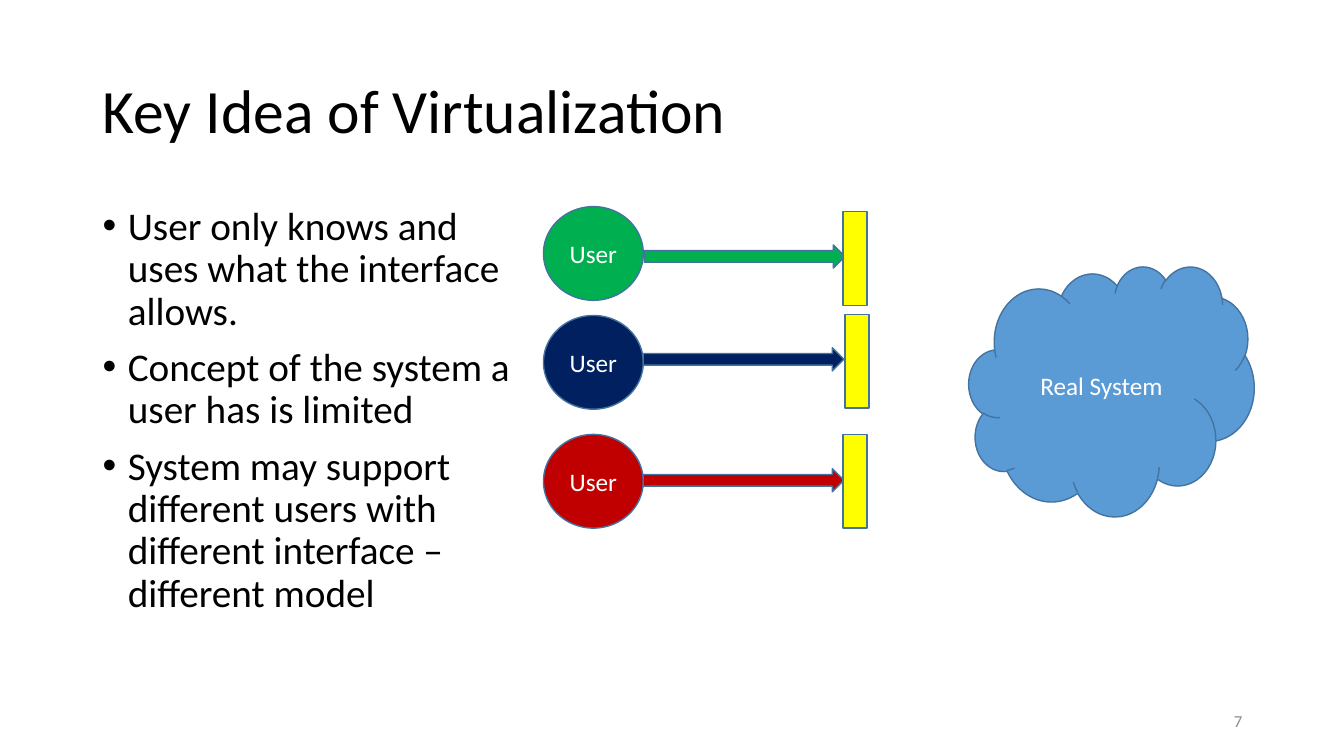
"""Build the slide on the key idea of virtualization."""
from dataclasses import dataclass

from lxml import etree
from pptx import Presentation
from pptx import util as u
from pptx.dml.color import RGBColor
from pptx.enum import shapes, text
from pptx.oxml.ns import qn


@dataclass(frozen=True)
class Theme:
    font: str = "Calibri"
    ink: str = "000000"
    light: str = "FFFFFF"
    muted: str = "8C8C8C"
    outline: str = "43739E"
    system: str = "5B9BD5"
    interface: str = "FFFF00"
    title_size: int = 44
    body_size: int = 28
    label_size: int = 18
    number_size: int = 12


@dataclass(frozen=True)
class Box:
    left: float
    top: float
    width: float
    height: float

    def lengths(self) -> list[u.Length]:
        return [u.Inches(value) for value in (self.left, self.top, self.width, self.height)]


@dataclass(frozen=True)
class User:
    color: str
    top: float
    arrow_left: float
    arrow_top: float
    interface_left: float
    interface_top: float


THEME = Theme()
USERS = [
    User("00B050", 2.05, 6.39, 2.43, 8.36, 2.1),
    User("002060", 3.13, 6.38, 3.45, 8.38, 3.12),
    User("C00000", 4.31, 6.38, 4.65, 8.36, 4.31),
]
POINTS = [
    "User only knows and uses what the interface allows.",
    "Concept of the system a user has is limited",
    "System may support different users with different interface – different model",
]


def style_paragraph(paragraph, size: int, color: str, alignment=text.PP_ALIGN.LEFT) -> None:
    paragraph.alignment = alignment
    for run in paragraph.runs:
        run.font.name = THEME.font
        run.font.size = u.Pt(size)
        run.font.color.rgb = RGBColor.from_string(color)


def add_text(slide, box: Box, lines: list[str], size: int, color: str,
             anchor=text.MSO_ANCHOR.MIDDLE, alignment=text.PP_ALIGN.LEFT):
    frame = slide.shapes.add_textbox(*box.lengths()).text_frame
    frame.word_wrap = True
    frame.vertical_anchor = anchor
    frame.text = "\n".join(lines)
    for paragraph in frame.paragraphs:
        style_paragraph(paragraph, size, color, alignment)
    return frame


def add_bullet(paragraph) -> None:
    properties = paragraph._p.get_or_add_pPr()
    properties.set("marL", str(u.Inches(0.25)))
    properties.set("indent", str(-u.Inches(0.25)))
    etree.SubElement(properties, qn("a:buFont")).set("typeface", "Arial")
    etree.SubElement(properties, qn("a:buChar")).set("char", "•")


def add_figure(slide, kind, box: Box, fill: str, label: str = "") -> None:
    shape = slide.shapes.add_shape(kind, *box.lengths())
    shape.shadow.inherit = False
    shape.fill.solid()
    shape.fill.fore_color.rgb = RGBColor.from_string(fill)
    shape.line.color.rgb = RGBColor.from_string(THEME.outline)
    shape.line.width = u.Pt(1)
    if label:
        frame = shape.text_frame
        frame.text = label
        frame.vertical_anchor = text.MSO_ANCHOR.MIDDLE
        style_paragraph(frame.paragraphs[0], THEME.label_size, THEME.light, text.PP_ALIGN.CENTER)


def add_user(slide, user: User) -> None:
    kinds = shapes.MSO_SHAPE
    add_figure(slide, kinds.OVAL, Box(5.39, user.top, 0.99, 0.93), user.color, "User")
    add_figure(slide, kinds.RIGHT_ARROW, Box(user.arrow_left, user.arrow_top, 1.99, 0.23), user.color)
    add_figure(slide, kinds.RECTANGLE, Box(user.interface_left, user.interface_top, 0.24, 0.93),
               THEME.interface)


def main() -> None:
    presentation = Presentation()
    presentation.slide_width = u.Inches(13.33)
    presentation.slide_height = u.Inches(7.5)
    slide = presentation.slides.add_slide(presentation.slide_layouts[6])

    title = add_text(slide, Box(0.92, 0.4, 11.5, 1.45), ["Key Idea of Virtualization"],
                     THEME.title_size, THEME.ink)
    title.paragraphs[0].line_spacing = 0.9

    body = add_text(slide, Box(0.92, 2, 4.25, 4.76), POINTS, THEME.body_size, THEME.ink,
                    text.MSO_ANCHOR.TOP)
    for index, paragraph in enumerate(body.paragraphs):
        add_bullet(paragraph)
        paragraph.line_spacing = 0.9
        paragraph.space_before = u.Pt(10 if index else 0)

    add_figure(slide, shapes.MSO_SHAPE.CLOUD, Box(9.61, 2.64, 2.83, 2.48), THEME.system, "Real System")
    for user in USERS:
        add_user(slide, user)
    add_text(slide, Box(9.42, 6.95, 3, 0.4), ["7"], THEME.number_size, THEME.muted,
             alignment=text.PP_ALIGN.RIGHT)
    presentation.save("out.pptx")


if __name__ == "__main__":
    main()
